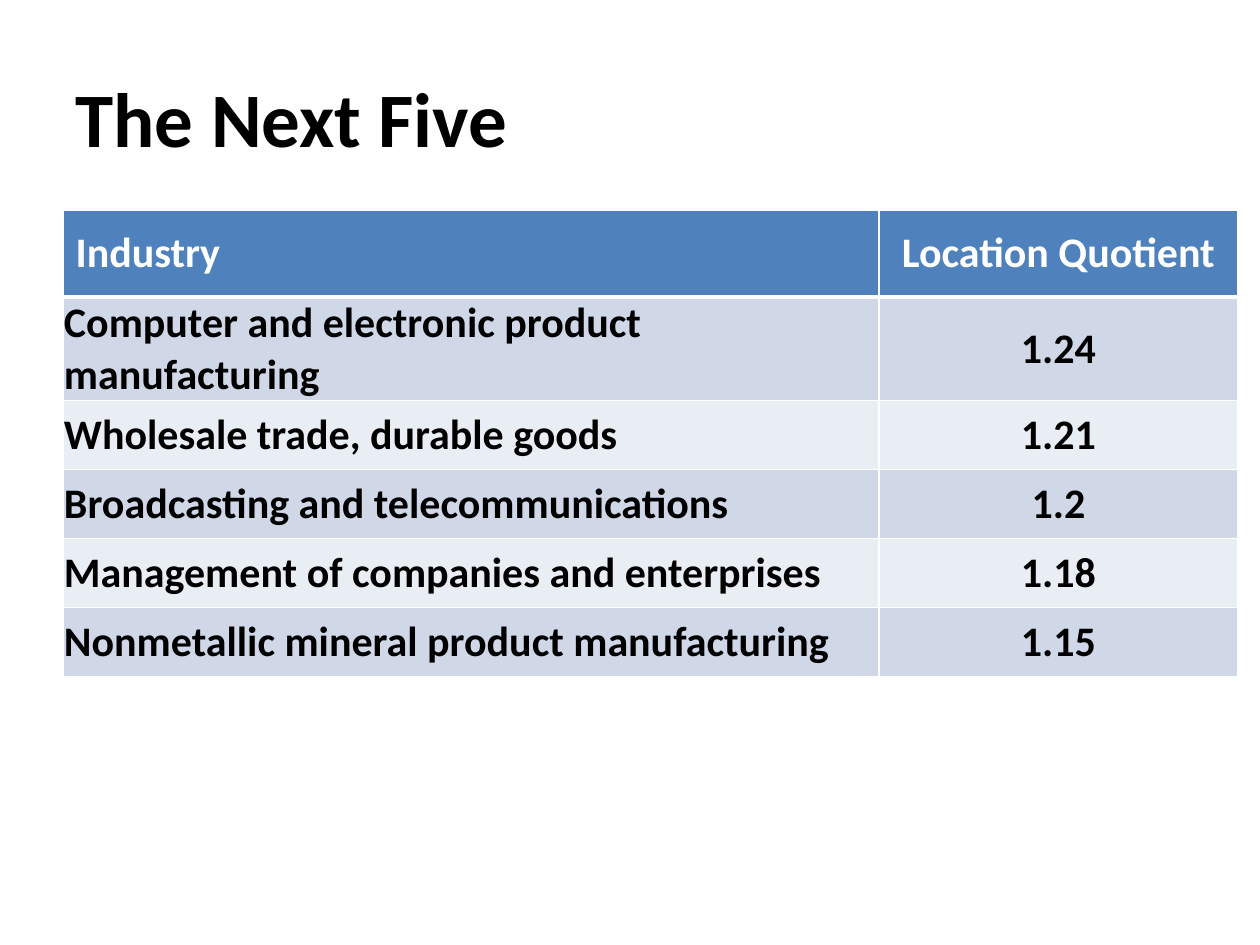
from dataclasses import dataclass
from lxml.etree import SubElement
from pptx import Presentation
from pptx.dml.color import RGBColor
from pptx.enum.text import MSO_ANCHOR, PP_ALIGN
from pptx.oxml.ns import qn
from pptx.util import Pt

EMU_PER_PX = 914400 / 126


@dataclass(frozen=True)
class Theme:
    font: str = "Calibri"
    title_size: int = 44
    table_size: int = 24
    ink: str = "000000"
    white: str = "FFFFFF"
    header: str = "4F81BD"
    bands: tuple = ("D0D8E8", "E9EDF4")


theme = Theme()


def px(length):
    return round(length * EMU_PER_PX)


def style(paragraph, size, color, align):
    paragraph.alignment = align
    paragraph.font.name = theme.font
    paragraph.font.size = Pt(size)
    paragraph.font.bold = True
    paragraph.font.color.rgb = RGBColor.from_string(color)


deck = Presentation()
deck.slide_width, deck.slide_height = px(1260), px(945)
slide = deck.slides.add_slide(deck.slide_layouts[5])

title = slide.shapes.title
title.left, title.top, title.width, title.height = px(63), px(38), px(1134), px(158)
title.text_frame.text = "The Next Five"
title.text_frame.vertical_anchor = MSO_ANCHOR.MIDDLE
style(title.text_frame.paragraphs[0], theme.title_size, theme.ink, PP_ALIGN.LEFT)

industries = [
    ("Industry", "Location Quotient"),
    ("Computer and electronic product manufacturing", "1.24"),
    ("Wholesale trade, durable goods", "1.21"),
    ("Broadcasting and telecommunications", "1.2"),
    ("Management of companies and enterprises", "1.18"),
    ("Nonmetallic mineral product manufacturing", "1.15"),
]
column_widths = [816, 359]
row_heights = [87] + [69] * 5
alignments = [PP_ALIGN.LEFT, PP_ALIGN.CENTER]

quotients = slide.shapes.add_table(
    len(industries), len(column_widths),
    px(63), px(210), px(sum(column_widths)), px(sum(row_heights)),
).table
for column, width in zip(quotients.columns, column_widths):
    column.width = px(width)
for row, height in zip(quotients.rows, row_heights):
    row.height = px(height)

for r, entry in enumerate(industries):
    is_header = r == 0
    fill_color = theme.header if is_header else theme.bands[(r - 1) % 2]
    text_color = theme.white if is_header else theme.ink
    for c, words in enumerate(entry):
        cell = quotients.cell(r, c)
        cell.text = words
        cell.vertical_anchor = MSO_ANCHOR.MIDDLE
        if not is_header:
            cell.margin_left = cell.margin_top = cell.margin_right = px(1)
            cell.margin_bottom = 0
        style(cell.text_frame.paragraphs[0], theme.table_size, text_color, alignments[c])
        properties = cell._tc.get_or_add_tcPr()
        for side in ("lnL", "lnR", "lnT", "lnB"):
            under_header = (r, side) in ((0, "lnB"), (1, "lnT"))
            border = SubElement(properties, qn(f"a:{side}"), w=str(Pt(3 if under_header else 1)))
            border_fill = SubElement(border, qn("a:solidFill"))
            SubElement(border_fill, qn("a:srgbClr"), val=theme.white)
        cell.fill.solid()
        cell.fill.fore_color.rgb = RGBColor.from_string(fill_color)

deck.save("out.pptx")
